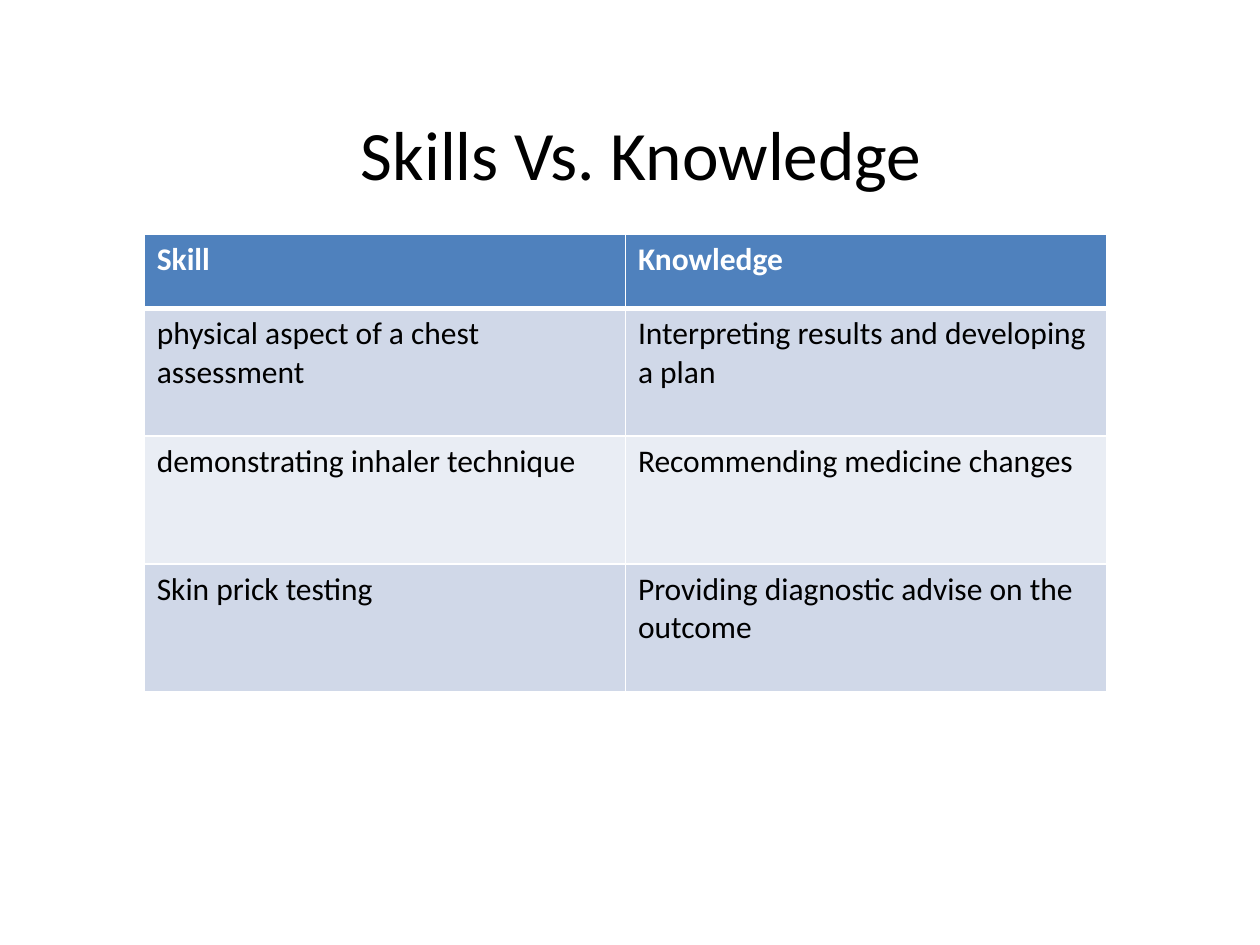
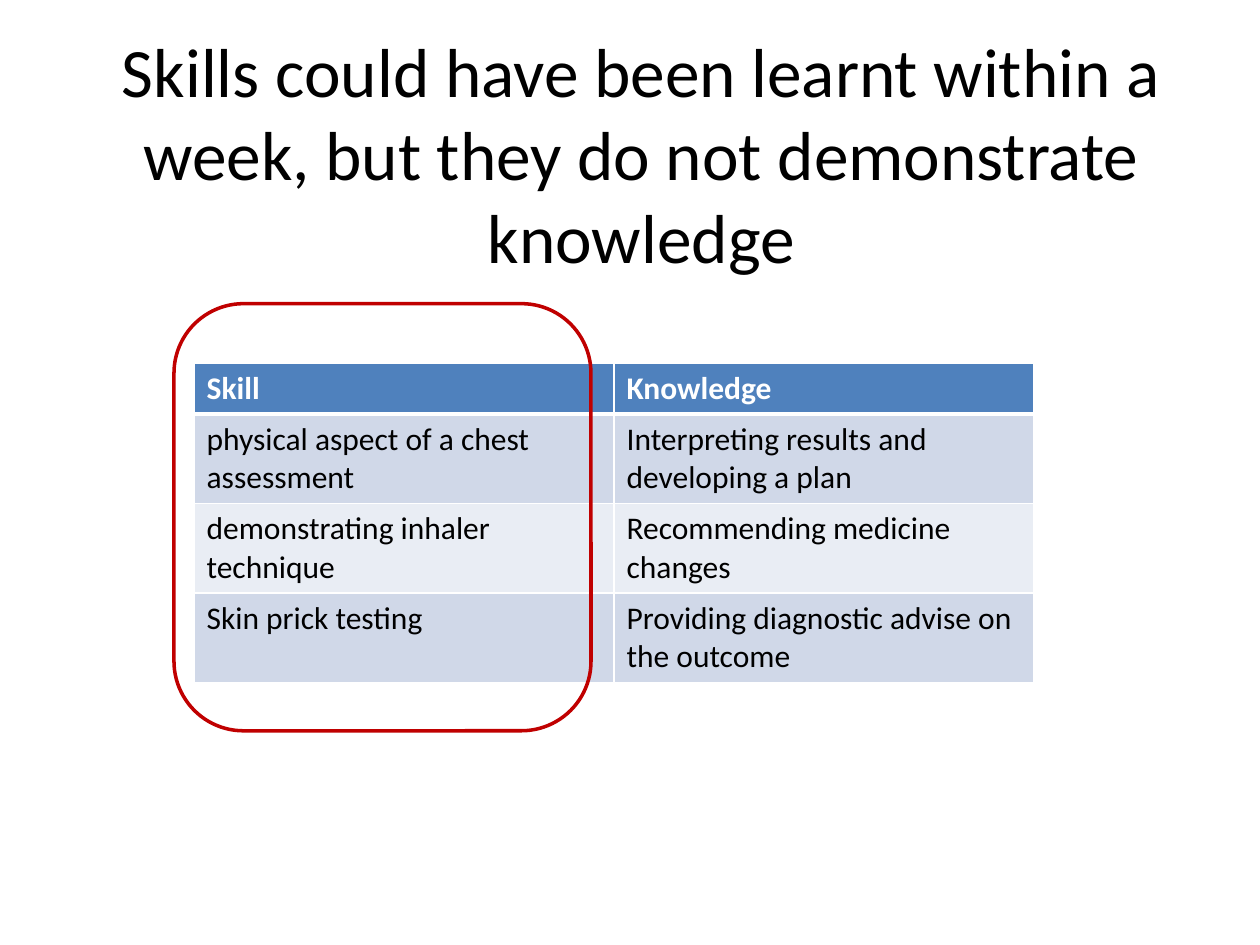
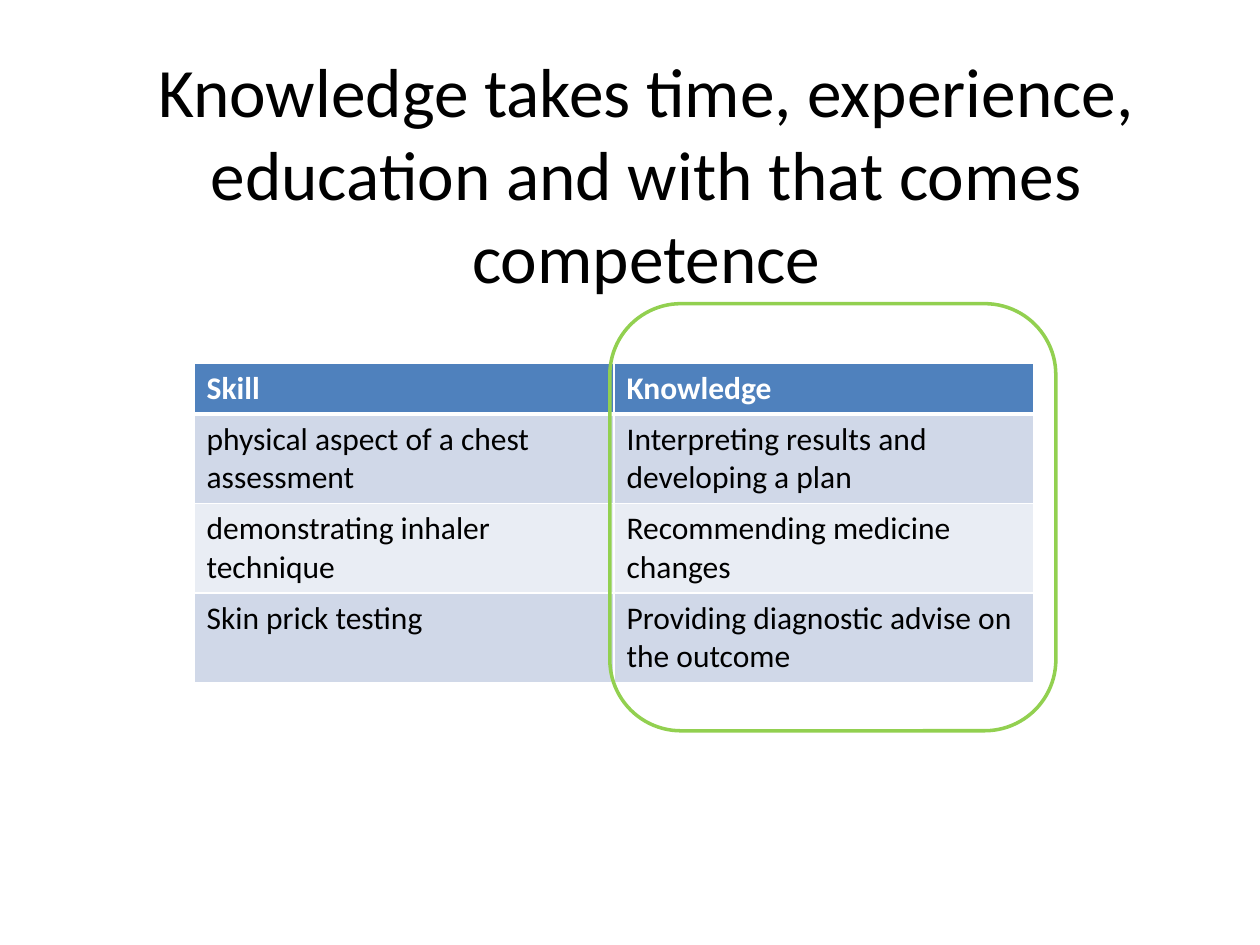
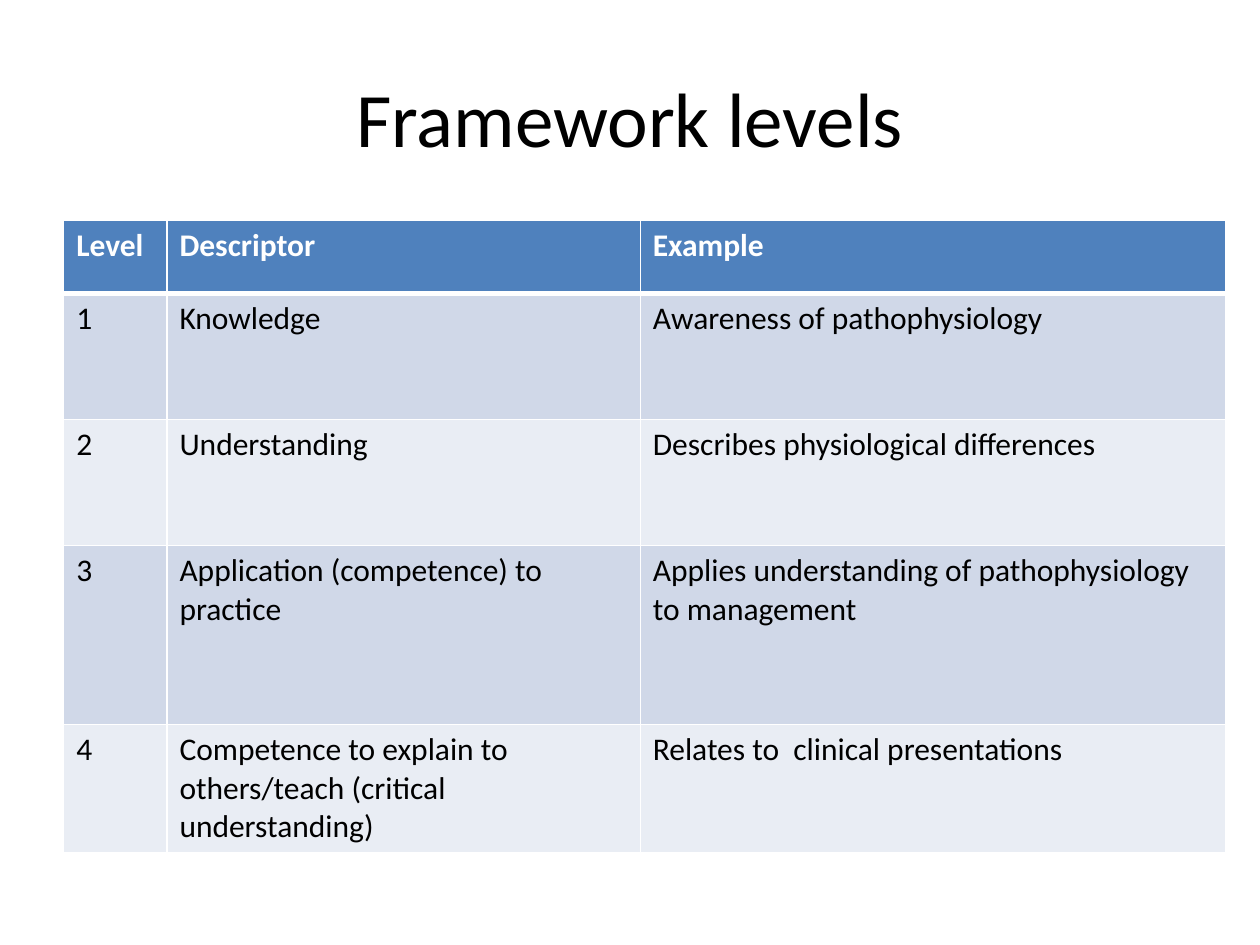
from dataclasses import dataclass

from lxml import etree
from pptx import Presentation
from pptx import util as u
from pptx.dml import color
from pptx.enum import shapes, text
from pptx.oxml import ns


@dataclass(frozen=True)
class Theme:
    """Colours, font and type sizes shared by every slide."""

    font: str = "Calibri"
    ink: str = "000000"
    white: str = "FFFFFF"
    header: str = "4F81BD"
    bands: tuple = ("D0D8E8", "E9EDF4")
    skill: str = "C00000"
    knowledge: str = "92D050"
    title: float = 39.6
    large_title: float = 44
    body: float = 18
    border: float = 1
    header_border: float = 3
    outline: float = 2


@dataclass(frozen=True)
class Box:
    """A rectangle in points."""

    left: float
    top: float
    width: float
    height: float

    def lengths(self):
        """Return the four sides as lengths for python-pptx."""
        return [u.Pt(side) for side in (self.left, self.top, self.width, self.height)]


THEME = Theme()
TITLE_BOX = Box(42.5, 66.2, 648, 90)
TITLE_LIFT = 51.6
COMPARISON_BOX = Box(110.9, 207.4, 480, 180.7)
COMPARISON_HEIGHTS = (29.2, 50.5, 50.5, 50.5)
COMPARISON = (
    ("Skill", "Knowledge"),
    ("physical aspect of a chest assessment", "Interpreting results and developing a plan"),
    ("demonstrating inhaler technique", "Recommending medicine changes"),
    ("Skin prick testing", "Providing diagnostic advise on the outcome"),
)
LEVELS = (
    ("Level", "Descriptor", "Example"),
    ("1", "Knowledge", "Awareness of pathophysiology"),
    ("2", "Understanding", "Describes physiological differences"),
    ("3", "Application (competence) to practice",
     "Applies understanding of pathophysiology to management"),
    ("4", "Competence to explain to others/teach (critical understanding)",
     "Relates to  clinical presentations"),
)


def rgb(value):
    """Return a colour from its hexadecimal form."""
    return color.RGBColor.from_string(value)


def style_font(font, size, ink, bold=False):
    """Apply the theme font with a size, colour and weight."""
    font.name = THEME.font
    font.size = u.Pt(size)
    font.bold = bold
    font.color.rgb = rgb(ink)


def add_title(slide, box, wording, size=THEME.title, lift=3.6):
    """Centre a title in its box, raised by a deeper bottom inset."""
    frame = slide.shapes.add_textbox(*box.lengths()).text_frame
    frame.word_wrap = True
    frame.auto_size = text.MSO_AUTO_SIZE.NONE
    frame.vertical_anchor = text.MSO_ANCHOR.MIDDLE
    frame.margin_bottom = u.Pt(lift)
    paragraph = frame.paragraphs[0]
    paragraph.text = wording
    paragraph.alignment = text.PP_ALIGN.CENTER
    style_font(paragraph.font, size, THEME.ink)


def add_borders(cell, top, bottom):
    """Draw white borders round a cell."""
    properties = cell._tc.get_or_add_tcPr()
    widths = {"L": THEME.border, "R": THEME.border, "T": top, "B": bottom}
    for side, width in widths.items():
        line = etree.SubElement(properties, ns.qn(f"a:ln{side}"), w=str(u.Pt(width)))
        fill = etree.SubElement(line, ns.qn("a:solidFill"))
        etree.SubElement(fill, ns.qn("a:srgbClr"), val=THEME.white)


def style_cell(cell, row, wording):
    """Fill one cell as a header or as part of a band."""
    is_header = row == 0
    add_borders(
        cell,
        THEME.header_border if row == 1 else THEME.border,
        THEME.header_border if is_header else THEME.border,
    )
    cell.fill.solid()
    cell.fill.fore_color.rgb = rgb(THEME.header if is_header else THEME.bands[(row - 1) % 2])
    paragraph = cell.text_frame.paragraphs[0]
    paragraph.text = wording
    style_font(paragraph.font, THEME.body, THEME.white if is_header else THEME.ink, is_header)


def add_banded_table(slide, box, rows, heights, shares):
    """Place a table whose columns share the width of its box."""
    table = slide.shapes.add_table(len(rows), len(shares), *box.lengths()).table
    for column, share in zip(table.columns, shares):
        column.width = u.Pt(box.width * share / sum(shares))
    for index, (wordings, height) in enumerate(zip(rows, heights)):
        table.rows[index].height = u.Pt(height)
        for position, wording in enumerate(wordings):
            style_cell(table.cell(index, position), index, wording)


def add_highlight(slide, box, outline):
    """Ring a table column with a rounded outline."""
    shape = slide.shapes.add_shape(shapes.MSO_SHAPE.ROUNDED_RECTANGLE, *box.lengths())
    shape.shadow.inherit = False
    shape.fill.background()
    shape.line.color.rgb = rgb(outline)
    shape.line.width = u.Pt(THEME.outline)


def add_comparison(slide, box=COMPARISON_BOX, heights=COMPARISON_HEIGHTS):
    """Set skills beside knowledge in two equal columns."""
    add_banded_table(slide, box, COMPARISON, heights, (1, 1))


def add_highlighted_comparison(slide, box, offset, width, outline):
    """Show the comparison with one column ringed."""
    add_comparison(slide, box)
    ring = Box(box.left + offset, box.top - 33.9, width, box.height + 63.4)
    add_highlight(slide, ring, outline)


def main():
    """Build and save the four slides."""
    presentation = Presentation()
    presentation.slide_width = u.Pt(720)
    presentation.slide_height = u.Pt(540)
    overview, skills, knowledge, levels = (
        presentation.slides.add_slide(presentation.slide_layouts[6]) for _ in range(4)
    )

    add_title(overview, TITLE_BOX, "Skills Vs. Knowledge", lift=TITLE_LIFT)
    add_comparison(overview, Box(82.4, 133.9, 550, 261.6), (42.3, 73.1, 73.1, 73.1))

    add_title(
        skills,
        TITLE_BOX,
        "Skills could have been learnt within a week, but they do not demonstrate knowledge",
        lift=TITLE_LIFT,
    )
    add_highlighted_comparison(skills, COMPARISON_BOX, -11.5, 238.3, THEME.skill)

    add_title(
        knowledge,
        Box(54.7, 51.1, 629.3, 95),
        "Knowledge takes time, experience, education and with that comes competence",
    )
    add_highlighted_comparison(knowledge, COMPARISON_BOX, 237.6, 254.9, THEME.knowledge)

    add_title(levels, Box(36, 21.6, 648, 90), "Framework levels", THEME.large_title)
    add_banded_table(
        levels, Box(36.4, 126, 664, 360), LEVELS, (41.8, 72, 72, 102.2, 72), (0.82, 3.76, 4.65)
    )

    presentation.save("out.pptx")


if __name__ == "__main__":
    main()
